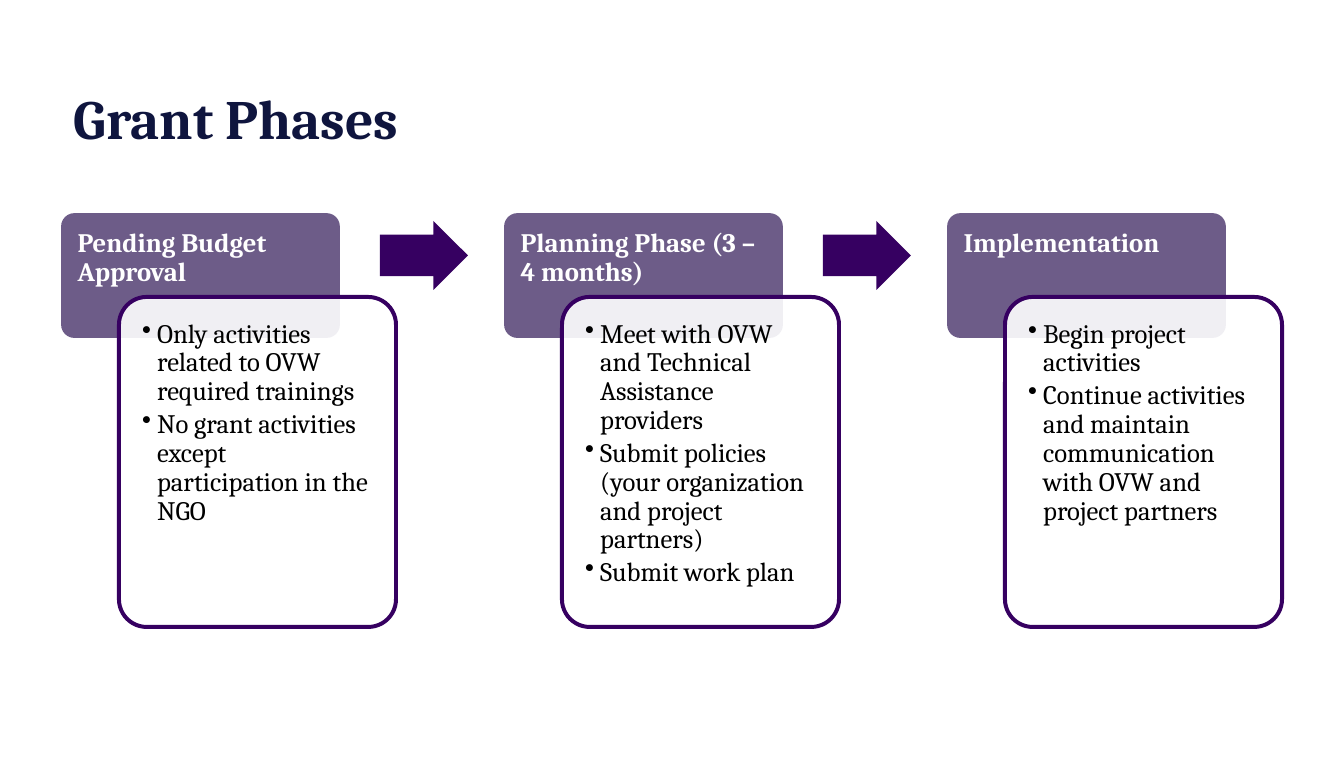
from lxml.etree import SubElement as Sub
from pptx import Presentation
from pptx.dml.color import RGBColor as Rgb
from pptx.enum.shapes import MSO_SHAPE as Kind
from pptx.enum.text import MSO_ANCHOR as Anchor, PP_ALIGN as Align
from pptx.oxml.ns import qn
from pptx.util import Pt

TITLE = "Grant Phases"
PHASES = [
    ("Pending Budget Approval", [
        "Only activities related to OVW required trainings",
        "No grant activities except participation in the NGO",
    ]),
    ("Planning Phase (3 – 4 months)", [
        "Meet with OVW and Technical Assistance providers",
        "Submit policies (your organization and project partners)",
        "Submit work plan",
    ]),
    ("Implementation", [
        "Begin project activities",
        "Continue activities and maintain communication with OVW and project partners",
    ]),
]
COLORS = {"title": "0F153E", "head": "6D5C88", "edge": "360061",
          "white": "FFFFFF", "text": "000000"}
FONT = "Cambria"

# Boxes are left, top, width, height in px; each phase shifts them by PITCH.
PITCH = 443
HEAD = (62, 214, 277, 123)
BODY = (119, 297, 277, 330)
ARROW = (380, 221, 88, 69)
INDENT = 15


def px(n):
    return int(n * 914400 / 128)


def color(name):
    return Rgb.from_string(COLORS[name])


def add_box(slide, kind, box, step, adjust, fill, line=None, width=1):
    left, top, wide, high = box
    shape = slide.shapes.add_shape(
        kind, px(left + step * PITCH), px(top), px(wide), px(high))
    for i, value in enumerate(adjust):
        shape.adjustments[i] = value
    shape.shadow.inherit = False
    shape.fill.solid()
    shape.fill.fore_color.rgb = color(fill)
    if line:
        shape.line.color.rgb = color(line)
        shape.line.width = Pt(width)
    else:
        shape.line.fill.background()
    return shape


def style(para, size, name, bold=False):
    para.alignment = Align.LEFT
    para.line_spacing = 0.9
    for run in para.runs:
        font = run.font
        font.name, font.size, font.bold = FONT, Pt(size), bold
        font.color.rgb = color(name)


def write(shape, lines, inset, name, bold=False):
    frame = shape.text_frame
    frame.word_wrap = True
    frame.vertical_anchor = Anchor.TOP
    frame.margin_left = frame.margin_right = px(inset)
    frame.margin_top = frame.margin_bottom = px(inset)
    frame.text = "\n".join(lines)
    for para in frame.paragraphs:
        style(para, 15, name, bold)


def add_bullet(para):
    para.level = 1
    para.space_after = Pt(2.25)
    props = para._p.get_or_add_pPr()
    props.set("marL", str(px(INDENT)))
    props.set("indent", str(-px(INDENT)))
    Sub(props, qn("a:buChar"), char="•")


def set_alpha(shape, percent):
    tint = shape._element.spPr.find(qn("a:solidFill"))[0]
    Sub(tint, qn("a:alpha"), val=str(percent * 1000))


def add_phase(slide, step, name, tasks):
    head = add_box(slide, Kind.ROUNDED_RECTANGLE, HEAD, step, [0.1],
                   "head", "head")
    write(head, [name], 12, "white", True)
    body = add_box(slide, Kind.ROUNDED_RECTANGLE, BODY, step, [0.1],
                   "white", "edge", 2.25)
    set_alpha(body, 90)
    write(body, tasks, 15, "text")
    for para in body.text_frame.paragraphs:
        add_bullet(para)


def main():
    deck = Presentation()
    deck.slide_width, deck.slide_height = px(1344), px(768)
    slide = deck.slides.add_slide(deck.slide_layouts[5])

    title = slide.shapes.title
    title.left, title.top, title.width, title.height = map(px, (61, 83, 1160, 78))
    title.text_frame.text = TITLE
    title.text_frame.vertical_anchor = Anchor.MIDDLE
    style(title.text_frame.paragraphs[0], 31.2, "title", True)

    for step, (name, tasks) in enumerate(PHASES):
        add_phase(slide, step, name, tasks)
        if step < len(PHASES) - 1:
            add_box(slide, Kind.RIGHT_ARROW, ARROW, step, [0.6, 0.5], "edge")

    deck.save("out.pptx")


if __name__ == "__main__":
    main()
